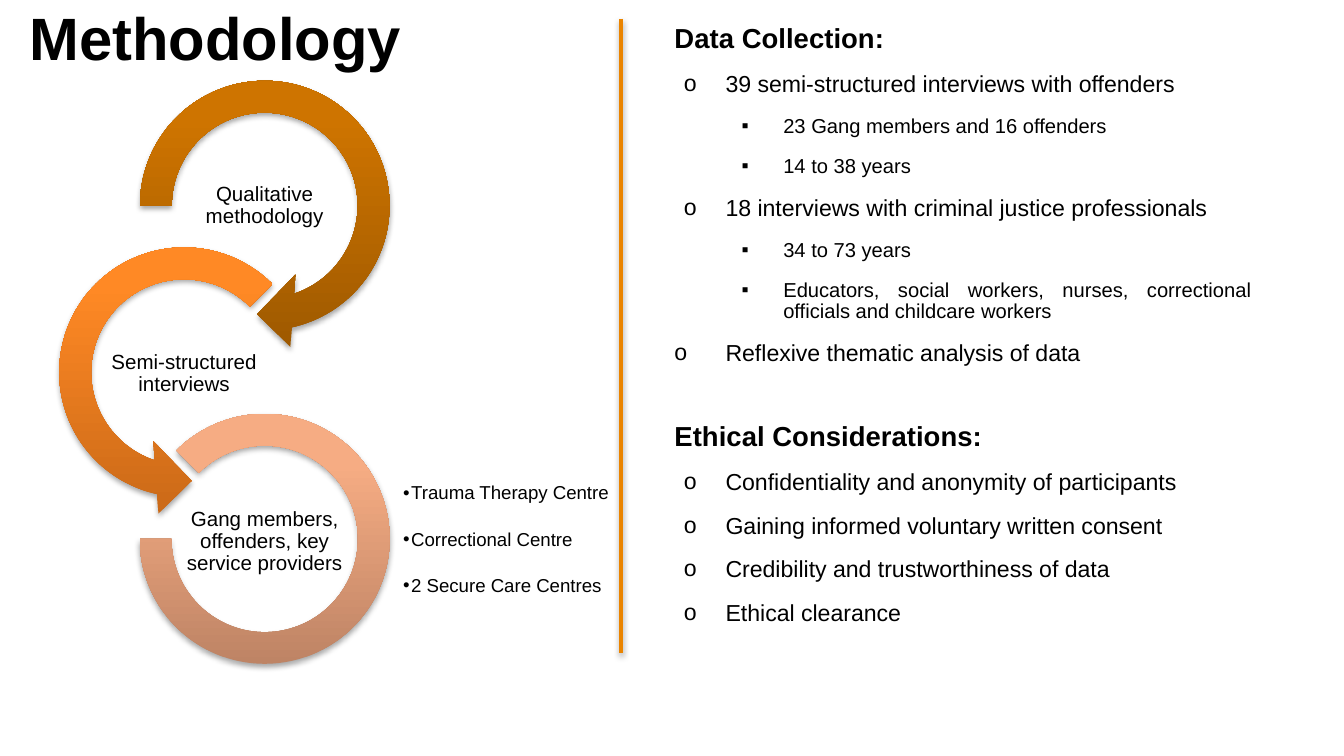
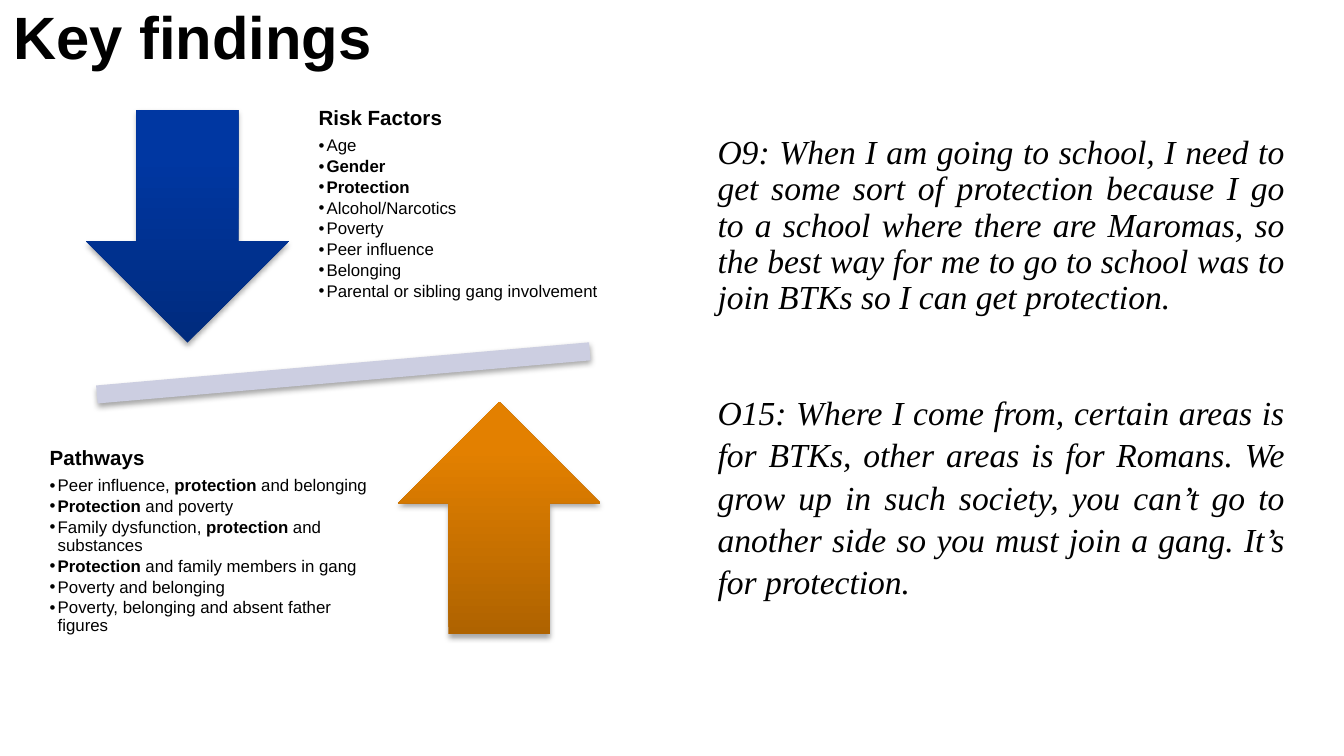
"""Build the Methodology and Key findings slides."""
import pptx
import pptx.dml.color
import pptx.enum.shapes
import pptx.enum.text
import pptx.oxml.ns
import pptx.util
from lxml import etree

Inches, Pt = pptx.util.Inches, pptx.util.Pt
RGBColor = pptx.dml.color.RGBColor
SHAPES = pptx.enum.shapes.MSO_SHAPE
ALIGN = pptx.enum.text.PP_ALIGN
ANCHOR = pptx.enum.text.MSO_ANCHOR
qn = pptx.oxml.ns.qn

BLACK = RGBColor(0x00, 0x00, 0x00)
ORANGE_LINE = RGBColor(0xEA, 0x84, 0x00)
PALE_BLUE = RGBColor(0xCC, 0xCE, 0xE1)
BROWN = (RGBColor(0x9E, 0x59, 0x00), RGBColor(0xCE, 0x74, 0x00))
ORANGE = (RGBColor(0xCA, 0x69, 0x17), RGBColor(0xFF, 0x89, 0x25))
PEACH = (RGBColor(0xBE, 0x84, 0x65), RGBColor(0xF6, 0xAC, 0x83))
NAVY = (RGBColor(0x00, 0x2B, 0x7D), RGBColor(0x00, 0x37, 0xA2))
AMBER = (RGBColor(0xAF, 0x63, 0x00), RGBColor(0xE3, 0x80, 0x00))

STYLES = {
    "section": dict(size=14.7, bold=True, align=ALIGN.JUSTIFY, line=0.87, before=22.5, after=8),
    "point": dict(size=12.4, align=ALIGN.JUSTIFY, line=0.87, before=2.4, after=8,
                  bullet="o", indent=(0.38, -0.31)),
    "wide point": dict(size=12.4, align=ALIGN.JUSTIFY, line=0.87, before=2.4, after=8,
                       bullet="o", indent=(0.38, -0.38)),
    "detail": dict(size=10.8, align=ALIGN.JUSTIFY, line=0.87, before=2.2, after=8, level=1,
                   bullet="▪", indent=(0.81, -0.31)),
    "label": dict(size=11, align=ALIGN.CENTER, line=0.9),
    "site": dict(size=10, line=0.9, before=14, level=1, bullet="•", indent=(0.06, -0.06)),
    "heading": dict(size=11, bold=True, line=0.9, after=4),
    "factor": dict(size=9, line=0.9, after=1.35, level=1, bullet="•", indent=(0.06, -0.06)),
    "first quote": dict(size=18, italic=True, font="Times New Roman", align=ALIGN.JUSTIFY, line=0.9),
    "second quote": dict(size=18, italic=True, font="Times New Roman", align=ALIGN.JUSTIFY,
                         line=1.05, before=39),
}

METHODS = [
    ("section", "Data Collection:"),
    ("point", "39 semi-structured interviews with offenders"),
    ("detail", "23 Gang members and 16 offenders"),
    ("detail", "14 to 38 years"),
    ("point", "18 interviews with criminal justice professionals"),
    ("detail", "34 to 73 years"),
    ("detail", "Educators, social workers, nurses, correctional officials and childcare workers"),
    ("wide point", "Reflexive thematic analysis of data"),
    ("section", "Ethical Considerations:"),
    ("point", "Confidentiality and anonymity of participants"),
    ("point", "Gaining informed voluntary written consent"),
    ("point", "Credibility and trustworthiness of data"),
    ("point", "Ethical clearance"),
]
STAGES = [
    ("Qualitative methodology", SHAPES.CIRCULAR_ARROW, 1.97, 2.16, BROWN,
     (0.11, 11.423, 45, 108, 0.125)),
    ("Semi-structured interviews", SHAPES.LEFT_CIRCULAR_ARROW, 1.37, 2.16, ORANGE,
     (0.11, 11.423, 63, 189, 0.125)),
    ("Gang members, offenders, key service providers", SHAPES.BLOCK_ARC, 1.97, 1.86, PEACH,
     (135, 108, 0.127)),
]
STAGE_TOP, STAGE_STEP, LABEL_STEP = 1.53, 1.24, 1.25
LABEL_WIDTH, LABEL_HEIGHT = 1.2, 0.6
SITES = ["Trauma Therapy Centre", "Correctional Centre", "2 Secure Care Centres"]

BALANCE = [
    ("Risk Factors", (2.28, 0.61, 2.49, 1.82),
     ["Age", "**Gender**", "**Protection**", "Alcohol/Narcotics", "Poverty", "Peer influence",
      "Belonging", "Parental or sibling gang involvement"],
     SHAPES.DOWN_ARROW, (0.64, 0.82, 1.51, 1.73), NAVY),
    ("Pathways", (0.28, 3.12, 2.66, 1.82),
     ["Peer influence, **protection** and belonging", "**Protection** and poverty",
      "Family dysfunction, **protection** and substances",
      "**Protection** and family members in gang", "Poverty and belonging",
      "Poverty, belonging and absent father figures"],
     SHAPES.UP_ARROW, (2.96, 2.99, 1.51, 1.73), AMBER),
]
QUOTES = [
    ("first quote", "O9: When I am going to school, I need to get some sort of protection because I go "
     "to a school where there are Maromas, so the best way for me to go to school was to join BTKs "
     "so I can get protection."),
    ("second quote", "O15: Where I come from, certain areas is for BTKs, other areas is for Romans. "
     "We grow up in such society, you can’t go to another side so you must join a gang. "
     "It’s for protection."),
]


def place(area):
    return [Inches(length) for length in area]


def centred(center, middle, width, height):
    return center - width / 2, middle - height / 2, width, height


def add_shadow(item, opacity, distance):
    effects = etree.SubElement(item.element.spPr, qn("a:effectLst"))
    shadow = etree.SubElement(effects, qn("a:outerShdw"), blurRad=str(Pt(3.1)),
                              dist=str(Pt(distance)), dir="5400000", rotWithShape="0")
    color = etree.SubElement(shadow, qn("a:srgbClr"), val="000000")
    etree.SubElement(color, qn("a:alpha"), val=str(opacity * 1000))


def add_figure(page, kind, area, colors, adjustments=(), rotation=0):
    figure = page.shapes.add_shape(kind, *place(area))
    for index, value in enumerate(adjustments):
        figure.adjustments[index] = value
    figure.rotation = rotation
    if len(colors) == 1:
        figure.fill.solid()
        figure.fill.fore_color.rgb = colors[0]
    else:
        figure.fill.gradient()
        figure.fill.gradient_angle = 90
        for stop, color, position in zip(figure.fill.gradient_stops, colors, (0, 0.8)):
            stop.color.rgb = color
            stop.position = position
    figure.line.fill.background()
    add_shadow(figure, 35, 1.8)


def write_paragraph(para, text, style, first):
    para.level = style.get("level", 0)
    para.alignment = style.get("align", ALIGN.LEFT)
    para.line_spacing = style["line"]
    para.space_before = Pt(0 if first else style.get("before", 0))
    para.space_after = Pt(style.get("after", 0))
    if "bullet" in style:
        properties = para._p.get_or_add_pPr()
        left, hanging = style["indent"]
        properties.set("marL", str(Inches(left)))
        properties.set("indent", str(Inches(hanging)))
        etree.SubElement(properties, qn("a:buFont"), typeface="Arial")
        etree.SubElement(properties, qn("a:buChar"), char=style["bullet"])
    para.font.name = style.get("font", "Arial")
    para.font.size = Pt(style["size"])
    para.font.bold = style.get("bold", False)
    para.font.italic = style.get("italic", False)
    para.font.color.rgb = BLACK
    for index, part in enumerate(text.split("**")):
        if part:
            span = para.add_run()
            span.text = part
            if index % 2:
                span.font.bold = True


def add_text(page, area, lines, anchor=ANCHOR.MIDDLE, inset=None):
    box = page.shapes.add_textbox(*place(area))
    frame = box.text_frame
    frame.word_wrap = True
    frame.vertical_anchor = anchor
    if inset is not None:
        frame.margin_left = frame.margin_right = Inches(inset)
        frame.margin_top = frame.margin_bottom = Inches(inset)
    for index, (style, text) in enumerate(lines):
        para = frame.add_paragraph() if index else frame.paragraphs[0]
        write_paragraph(para, text, STYLES[style], index == 0)


def add_page(deck, title, area):
    page = deck.slides.add_slide(deck.slide_layouts[5])
    box = page.shapes.title
    box.left, box.top, box.width, box.height = place(area)
    box.text_frame.text = title
    box.text_frame.vertical_anchor = ANCHOR.MIDDLE
    box.text_frame.auto_size = pptx.enum.text.MSO_AUTO_SIZE.NONE
    para = box.text_frame.paragraphs[0]
    para.alignment = ALIGN.LEFT
    para.font.name = "Arial"
    para.font.size = Pt(32)
    para.font.bold = True
    para.font.color.rgb = BLACK
    return page


def build_methodology(deck):
    page = add_page(deck, "Methodology", (0.12, -0.2, 9, 0.94))
    add_text(page, (4.92, 0.14, 4.49, 4.65), METHODS, ANCHOR.TOP)
    for index, (label, kind, center, size, colors, adjustments) in enumerate(STAGES):
        stage_area = centred(center, STAGE_TOP + index * STAGE_STEP, size, size)
        label_area = centred(center, STAGE_TOP + index * LABEL_STEP, LABEL_WIDTH, LABEL_HEIGHT)
        add_figure(page, kind, stage_area, colors, adjustments)
        add_text(page, label_area, [("label", label)], inset=0.01)
    add_text(page, (2.99, 3.36, 1.64, 1.32), [("site", site) for site in SITES], inset=0.01)
    divider = page.shapes.add_connector(pptx.enum.shapes.MSO_CONNECTOR.STRAIGHT,
                                        *place((4.62, 0.14, 4.62, 4.86)))
    divider.line.color.rgb = ORANGE_LINE
    divider.line.width = Pt(2)
    add_shadow(divider, 38, 1.6)


def build_findings(deck):
    page = add_page(deck, "Key findings", (0, 0.01, 9, 0.51))
    add_figure(page, SHAPES.MATH_MINUS, (0.05, 2.49, 5.01, 0.57), (PALE_BLUE,), rotation=355)
    for heading, text_area, factors, kind, arrow_area, colors in BALANCE:
        add_figure(page, kind, arrow_area, colors)
        add_text(page, text_area, [("heading", heading)] + [("factor", factor) for factor in factors],
                 inset=0.09)
    add_text(page, (5.24, 0.96, 4.42, 3.71), QUOTES, ANCHOR.TOP)


def main():
    deck = pptx.Presentation()
    deck.slide_width = Inches(10)
    deck.slide_height = deck.slide_width * 9 // 16
    build_methodology(deck)
    build_findings(deck)
    deck.save("out.pptx")


if __name__ == "__main__":
    main()
